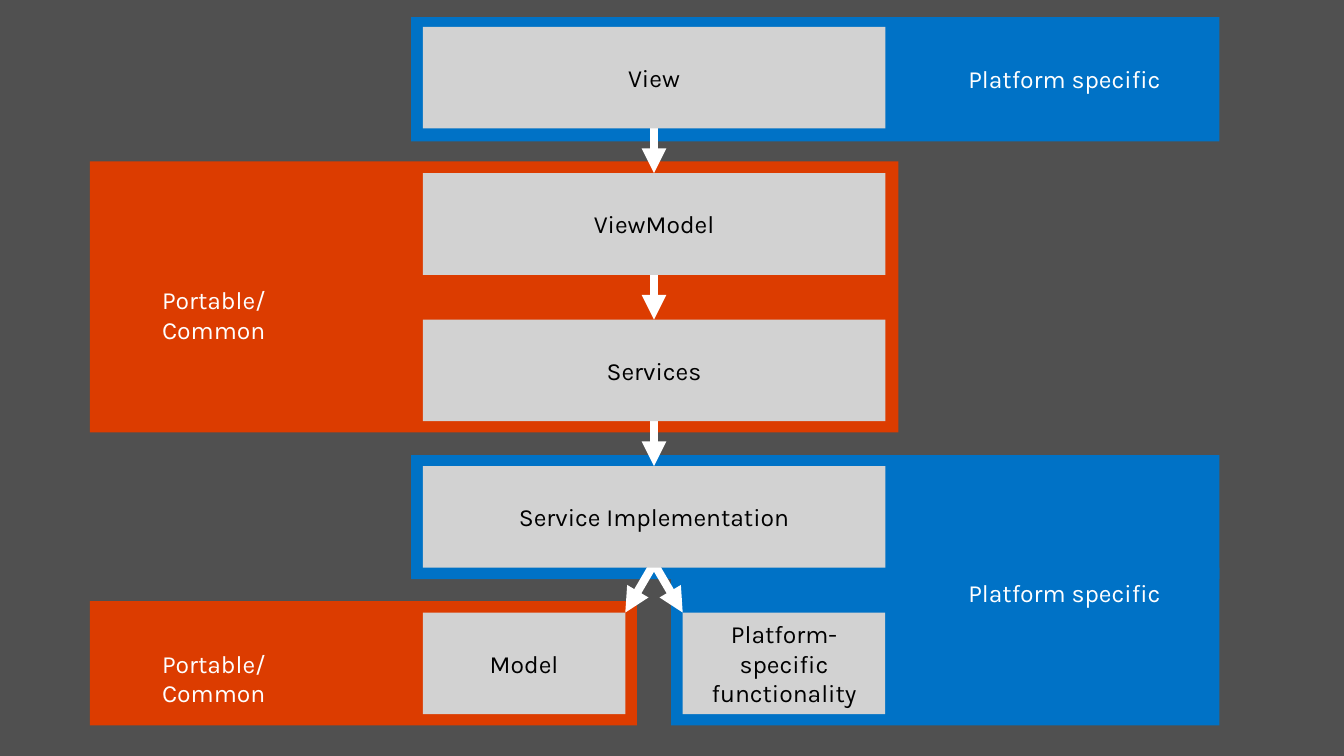
from lxml.etree import SubElement
from pptx import Presentation
from pptx.dml.color import RGBColor
from pptx.enum.shapes import MSO_CONNECTOR, MSO_SHAPE
from pptx.enum.text import MSO_ANCHOR, PP_ALIGN
from pptx.oxml.ns import qn
from pptx.util import Pt

COLORS = {
    "background": "505050",
    "platform": "0072C6",
    "portable": "DC3C00",
    "layer": "D2D2D2",
    "white": "FFFFFF",
    "black": "000000",
}


def add_block(left, top, width, height, color):
    block = page.shapes.add_shape(
        MSO_SHAPE.RECTANGLE, Pt(left), Pt(top), Pt(width), Pt(height))
    block.shadow.inherit = False
    block.fill.solid()
    block.fill.fore_color.rgb = RGBColor.from_string(COLORS[color])
    block.line.fill.background()
    return block


def write_lines(frame, lines, color, alignment):
    frame.word_wrap = True
    frame.text = "\n".join(lines)
    for para in frame.paragraphs:
        para.alignment = alignment
        para.font.name = "Karla"
        para.font.size = Pt(18)
        para.font.color.rgb = RGBColor.from_string(COLORS[color])


deck = Presentation()
deck.slide_width, deck.slide_height = Pt(979.2), Pt(550.8)
page = deck.slides.add_slide(deck.slide_layouts[6])
page.background.fill.solid()
page.background.fill.fore_color.rgb = RGBColor.from_string(COLORS["background"])

# Layer grid
LAYER_LEFT, LAYER_WIDTH, LAYER_HEIGHT = 308, 337, 74
HALF_WIDTH = 147.6
CENTER = LAYER_LEFT + LAYER_WIDTH / 2
RIGHT_HALF = LAYER_LEFT + LAYER_WIDTH - HALF_WIDTH
layer_tops = [19.5 + 106.7 * row for row in range(5)]

# Coloured areas: left, top, width, height, colour
areas = [
    (489, 413.5, 399.5, 115, "platform"),
    (65.5, 438, 398.5, 90.5, "portable"),
    (299.5, 331.5, 589, 90.5, "platform"),
    (299.5, 12.5, 589, 90.5, "platform"),
    (65.5, 117.5, 589, 197.5, "portable"),
]
for area in areas:
    add_block(*area)

# Area labels: left, top, width, text
labels = [
    (698.4, 43.2, 156, "Platform specific"),
    (111, 204, 160, "Portable/Common"),
    (698.4, 417.6, 156, "Platform specific"),
    (111, 469, 160, "Portable/Common"),
]
for left, top, width, text in labels:
    box = page.shapes.add_textbox(Pt(left), Pt(top), Pt(width), Pt(29))
    write_lines(box.text_frame, [text], "white", PP_ALIGN.LEFT)

# Arrows: three straight down, then two branches
arrows = [(top + LAYER_HEIGHT, CENTER, next_top)
          for top, next_top in zip(layer_tops[:3], layer_tops[1:4])]
branch_start = layer_tops[3] + LAYER_HEIGHT - 3
arrows += [(branch_start, LAYER_LEFT + HALF_WIDTH, layer_tops[4]),
           (branch_start, RIGHT_HALF, layer_tops[4])]
for start_y, end_x, end_y in arrows:
    arrow = page.shapes.add_connector(
        MSO_CONNECTOR.STRAIGHT, Pt(CENTER), Pt(start_y), Pt(end_x), Pt(end_y))
    arrow.line.width = Pt(6)
    arrow.line.color.rgb = RGBColor.from_string(COLORS["white"])
    SubElement(arrow.line._get_or_add_ln(), qn("a:tailEnd"), type="triangle")
    SubElement(arrow._element.spPr, qn("a:effectLst"))

# Layers: row, left, width, lines
layers = [
    (0, LAYER_LEFT, LAYER_WIDTH, ["View"]),
    (1, LAYER_LEFT, LAYER_WIDTH, ["ViewModel"]),
    (2, LAYER_LEFT, LAYER_WIDTH, ["Services"]),
    (3, LAYER_LEFT, LAYER_WIDTH, ["Service Implementation"]),
    (4, LAYER_LEFT, HALF_WIDTH, ["Model"]),
    (4, RIGHT_HALF, HALF_WIDTH, ["Platform-specific", "functionality"]),
]
for row, left, width, lines in layers:
    layer = add_block(left, layer_tops[row], width, LAYER_HEIGHT, "layer")
    layer.text_frame.vertical_anchor = MSO_ANCHOR.MIDDLE
    write_lines(layer.text_frame, lines, "black", PP_ALIGN.CENTER)

deck.save("out.pptx")
